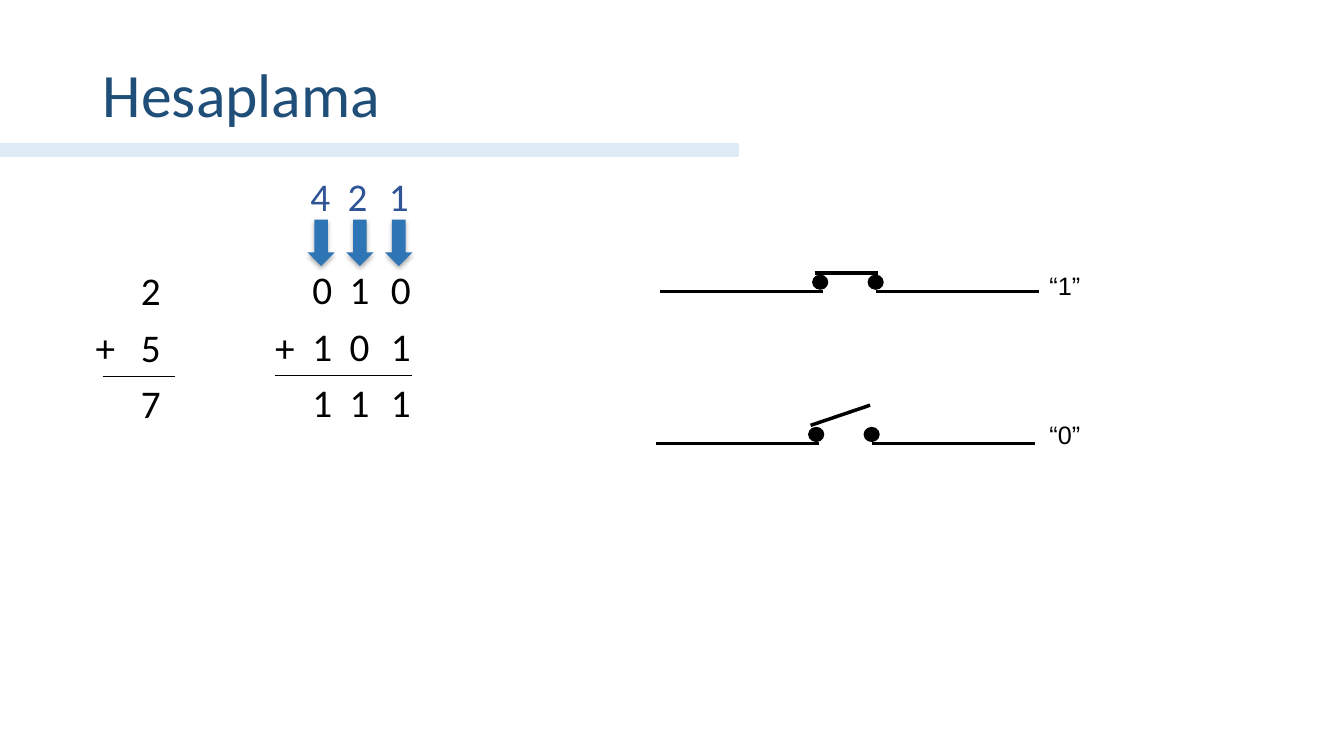
from lxml.etree import SubElement
from pptx import Presentation
from pptx.dml.color import RGBColor
from pptx.enum.shapes import MSO_CONNECTOR, MSO_SHAPE
from pptx.enum.text import MSO_ANCHOR, PP_ALIGN
from pptx.oxml.ns import qn
from pptx.util import Inches, Pt

COLORS = {
    "title": "1F4E79",
    "bar": "DEEBF7",
    "weight": "2F5597",
    "arrow": "2E75B6",
    "ink": "000000",
}


def color(name):
    """Return the named palette colour."""
    return RGBColor.from_string(COLORS[name])


def format_paragraph(paragraph, size=28, font="Calibri", ink="ink", line_spacing=0.9, space_before=10):
    """Apply font and spacing to a paragraph."""
    paragraph.alignment = PP_ALIGN.LEFT
    paragraph.line_spacing = line_spacing
    paragraph.space_before = Pt(space_before)
    for run in paragraph.runs:
        run.font.size = Pt(size)
        run.font.name = font
        run.font.color.rgb = color(ink)


def add_text(slide, text, left, top, width=0.4, height=0.53, wrap=False, indent=0, **text_format):
    """Add a text box with one paragraph per line and an optional hanging indent."""
    shape = slide.shapes.add_textbox(Inches(left), Inches(top), Inches(width), Inches(height))
    frame = shape.text_frame
    frame.word_wrap = wrap
    frame.text = text
    for paragraph in frame.paragraphs:
        format_paragraph(paragraph, **text_format)
        if indent:
            properties = paragraph._p.get_or_add_pPr()
            properties.set("marL", str(Inches(indent)))
            properties.set("indent", str(-Inches(indent)))


def add_line(slide, start, end, weight=0.75):
    """Add a straight black line without a shadow."""
    points = [Inches(value) for value in (*start, *end)]
    connector = slide.shapes.add_connector(MSO_CONNECTOR.STRAIGHT, *points)
    connector.line.color.rgb = color("ink")
    connector.line.width = Pt(weight)
    SubElement(connector._element.spPr, qn("a:effectLst"))


def add_filled(slide, kind, left, top, width, height, fill, line_width=0):
    """Add a filled preset shape, outlined in its fill colour if a width is given."""
    shape = slide.shapes.add_shape(kind, Inches(left), Inches(top), Inches(width), Inches(height))
    shape.shadow.inherit = False
    shape.fill.solid()
    shape.fill.fore_color.rgb = color(fill)
    if line_width:
        shape.line.color.rgb = color(fill)
        shape.line.width = Pt(line_width)
    else:
        shape.line.fill.background()
    return shape


def add_shadow(shape):
    """Give a shape a soft shadow that falls straight down."""
    effects = shape._element.spPr.find(qn("a:effectLst"))
    shadow = SubElement(effects, qn("a:outerShdw"), blurRad=str(Pt(3.5)), dist=str(Pt(2.2)),
                        dir="5400000", rotWithShape="0")
    shade = SubElement(shadow, qn("a:srgbClr"), val=COLORS["ink"])
    SubElement(shade, qn("a:alpha"), val="32000")


def add_heading(slide, text, left, top, width, height):
    """Place the title and the bar below it."""
    add_filled(slide, MSO_SHAPE.RECTANGLE, 0, top + 1.03, 7.31, 0.11, "bar", 2.25)
    title = slide.shapes.title
    title.left, title.top, title.width, title.height = map(Inches, (left, top, width, height))
    title.text_frame.text = text
    title.text_frame.vertical_anchor = MSO_ANCHOR.MIDDLE
    format_paragraph(title.text_frame.paragraphs[0], size=44, ink="title", space_before=0)


def add_decimal_sum(slide, left, top, width, height):
    """Write the sum in decimal digits with its rule."""
    add_text(slide, "\t2\n+\t5\n\t7", left, top, width, height, wrap=True, indent=0.45)
    add_line(slide, (left + 0.17, top + 1.09), (left + 0.89, top + 1.09))


def add_binary_sum(slide, left, top):
    """Write the sum in binary digits below the place values."""
    columns = [left + offset for offset in (0.37, 0.74, 1.15)]
    for index, (weight, column) in enumerate(zip("421", columns)):
        add_text(slide, weight, column - 0.02, top, ink="weight")
        arrow = add_filled(slide, MSO_SHAPE.DOWN_ARROW, left + 0.42 + 0.385 * index, top + 0.47,
                           0.27, 0.46, "arrow")
        add_shadow(arrow)
    for row, digits in enumerate(("010", "101", "111")):
        for digit, column in zip(digits, columns):
            add_text(slide, digit, column, top + 0.93 + 0.56 * row)
    add_text(slide, "+", left, top + 1.45, height=0.57, line_spacing=1, space_before=0)
    add_line(slide, (left + 0.1, top + 2.02), (left + 1.46, top + 2.02))


def add_switch(slide, label, left, wire, lever_end, label_top):
    """Draw a switch on a wire, with its lever ending at the given offset."""
    for start, end in ((0, 1.61), (2.14, 3.76)):
        add_line(slide, (left + start, wire), (left + end, wire), 2.5)
    for contact in (1.51, 2.06):
        add_filled(slide, MSO_SHAPE.OVAL, left + contact, wire - 0.16, 0.15, 0.14, "ink", 0.75)
    across, up = lever_end
    add_line(slide, (left + 1.53, wire - 0.18), (left + across, wire - up), 2.5)
    add_text(slide, label, 10.31, label_top, 0.57, 0.4, wrap=True, size=18, font="Arial",
             line_spacing=1, space_before=9)


def main():
    """Build and save the slide."""
    presentation = Presentation()
    presentation.slide_width = Inches(13.33)
    presentation.slide_height = Inches(7.5)
    slide = presentation.slides.add_slide(presentation.slide_layouts[5])
    add_heading(slide, "Hesaplama", 0.92, 0.4, 11.5, 1.14)
    add_decimal_sum(slide, 0.85, 2.65, 1.24, 1.91)
    add_switch(slide, "“1”", 6.55, 2.89, (2.16, 0.18), 2.63)
    add_switch(slide, "“0”", 6.51, 4.4, (2.12, 0.38), 4.11)
    add_binary_sum(slide, 2.63, 1.71)
    presentation.save("out.pptx")


if __name__ == "__main__":
    main()
